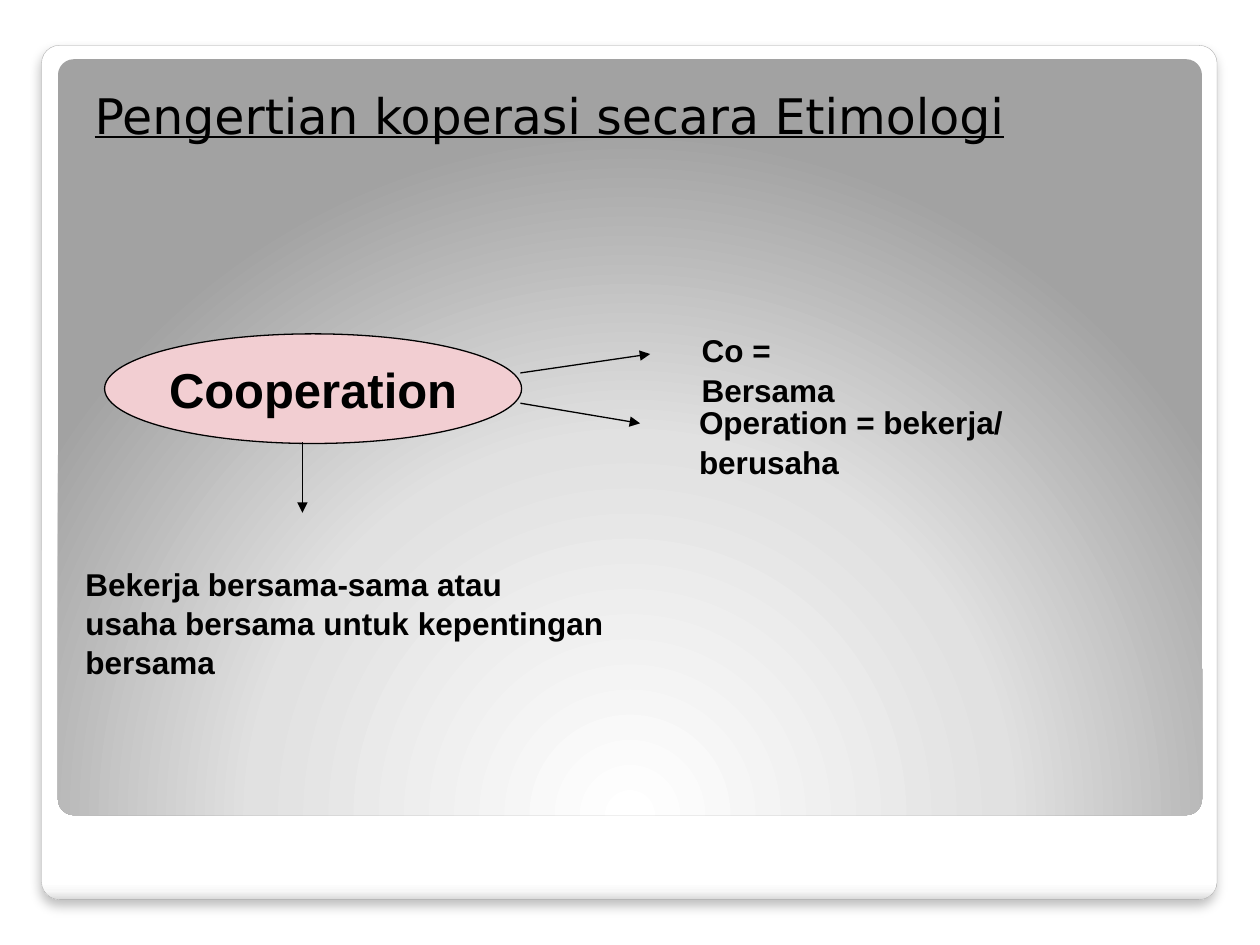
from lxml.etree import SubElement
from pptx import Presentation
from pptx.dml.color import RGBColor
from pptx.enum.shapes import MSO_CONNECTOR, MSO_SHAPE
from pptx.enum.text import MSO_ANCHOR, MSO_AUTO_SIZE, PP_ALIGN
from pptx.oxml import parse_xml
from pptx.oxml.ns import nsdecls, qn
from pptx.util import Inches, Pt

COLORS = {
    "text": "000000",
    "line": "000000",
    "frame_line": "A4A4A4",
    "shadow": "000000",
    "ellipse": "F2CED2",
}
FRAME_STOPS = [(0, "FFFFFF"), (98, "FFFFFF"), (99, "F7F7F7"), (100, "DADADA")]
PANEL_STOPS = [(0, "FFFFFF"), (55, "E1E1E1"), (100, "A2A2A2")]
DOWNWARD = '<a:lin ang="5400000" scaled="0"/>'
FROM_BOTTOM = ('<a:path path="circle"><a:fillToRect l="50000" t="175000" '
               'r="50000" b="-75000"/></a:path>')


def color(name):
    return RGBColor.from_string(COLORS[name])


def inches(box):
    return [Inches(length) for length in box]


def style_font(paragraph, name, size, bold=False):
    font = paragraph.font
    font.name, font.size, font.bold = name, Pt(size), bold
    font.color.rgb = color("text")


def add_gradient_panel(slide, box, stops, direction):
    """Add a rounded panel whose gradient follows the given direction XML."""
    shape = slide.shapes.add_shape(MSO_SHAPE.ROUNDED_RECTANGLE, *inches(box))
    shape.adjustments[0] = 0.021
    shape.shadow.inherit = False
    shape.line.fill.background()
    stop_xml = "".join(
        f'<a:gs pos="{position * 1000}"><a:srgbClr val="{value}"/></a:gs>'
        for position, value in stops)
    gradient = parse_xml(
        f'<a:gradFill {nsdecls("a")} rotWithShape="1">'
        f'<a:gsLst>{stop_xml}</a:gsLst>{direction}</a:gradFill>')
    shape._element.spPr.find(qn("a:prstGeom")).addnext(gradient)
    return shape


def add_background(slide, frame_box, panel_box):
    frame = add_gradient_panel(slide, frame_box, FRAME_STOPS, DOWNWARD)
    frame.line.color.rgb = color("frame_line")
    frame.line.width = Pt(0.16)
    effects = frame._element.spPr.find(qn("a:effectLst"))
    effects.append(parse_xml(
        f'<a:outerShdw {nsdecls("a")} blurRad="{Pt(6)}" dist="{Pt(4)}" '
        f'dir="5400000" algn="tl" rotWithShape="0">'
        f'<a:srgbClr val="{COLORS["shadow"]}"><a:alpha val="25000"/></a:srgbClr>'
        f'</a:outerShdw>'))
    add_gradient_panel(slide, panel_box, PANEL_STOPS, FROM_BOTTOM)


def place_title(slide, box, text):
    title = slide.shapes.title
    title.left, title.top, title.width, title.height = inches(box)
    slide.shapes._spTree.append(title._element)  # in front of the panels
    frame = title.text_frame
    frame.text = text
    frame.auto_size = MSO_AUTO_SIZE.NONE
    frame.vertical_anchor = MSO_ANCHOR.TOP
    frame.margin_left, frame.margin_top = Inches(0.2), Inches(0.1)
    paragraph = frame.paragraphs[0]
    paragraph.alignment = PP_ALIGN.LEFT
    paragraph.space_before = Pt(2.5)
    style_font(paragraph, "DejaVu Sans", 28)
    paragraph.font.underline = True


def add_term(slide, box, text):
    ellipse = slide.shapes.add_shape(MSO_SHAPE.OVAL, *inches(box))
    ellipse.shadow.inherit = False
    ellipse.fill.solid()
    ellipse.fill.fore_color.rgb = color("ellipse")
    ellipse.line.color.rgb = color("line")
    ellipse.line.width = Pt(0.75)
    frame = ellipse.text_frame
    frame.text = text
    frame.word_wrap = False
    frame.vertical_anchor = MSO_ANCHOR.MIDDLE
    paragraph = frame.paragraphs[0]
    paragraph.alignment = PP_ALIGN.CENTER
    style_font(paragraph, "Arial", 28, bold=True)


def add_arrow(slide, start, end):
    arrow = slide.shapes.add_connector(
        MSO_CONNECTOR.STRAIGHT, *inches(start), *inches(end))
    arrow.line.color.rgb = color("line")
    arrow.line.width = Pt(0.75)
    SubElement(arrow.line._get_or_add_ln(), qn("a:tailEnd"), type="triangle")
    SubElement(arrow._element.spPr, qn("a:effectLst"))


def add_meaning(slide, box, text):
    frame = slide.shapes.add_textbox(*inches(box)).text_frame
    frame.word_wrap = True
    frame.text = text
    for paragraph in frame.paragraphs:
        paragraph.line_spacing = 1.04
        style_font(paragraph, "Arial", 18, bold=True)


def add_etymology(slide, left, top):
    """Place the term, its arrows and their meanings from the term's corner."""
    def offset(x, y, *size):
        return (left + x, top + y, *size)

    add_term(slide, offset(0, 0, 3.31, 0.87), "Cooperation")
    for start, end in [((3.3, 0.31), (4.33, 0.16)),
                       ((3.3, 0.55), (4.25, 0.71)),
                       ((1.57, 0.86), (1.57, 1.42))]:
        add_arrow(slide, offset(*start), offset(*end))
    for box, text in [
            ((4.64, -0.08, 1.82, 0.4), "Co = Bersama"),
            ((4.62, 0.49, 3.67, 0.4), "Operation = bekerja/ berusaha"),
            ((-0.25, 1.77, 5.08, 0.7),
             "Bekerja bersama-sama atau\n"
             "usaha bersama untuk kepentingan bersama")]:
        add_meaning(slide, offset(*box), text)


def main():
    presentation = Presentation()
    presentation.slide_width, presentation.slide_height = Inches(10), Inches(7.5)
    slide = presentation.slides.add_slide(presentation.slide_layouts[5])
    add_background(slide, (0.33, 0.36, 9.33, 6.78), (0.46, 0.47, 9.08, 6))
    place_title(slide, (0.55, 0.58, 8.95, 4.58),
                "Pengertian koperasi secara Etimologi")
    add_etymology(slide, 0.83, 2.65)
    presentation.save("out.pptx")


if __name__ == "__main__":
    main()
